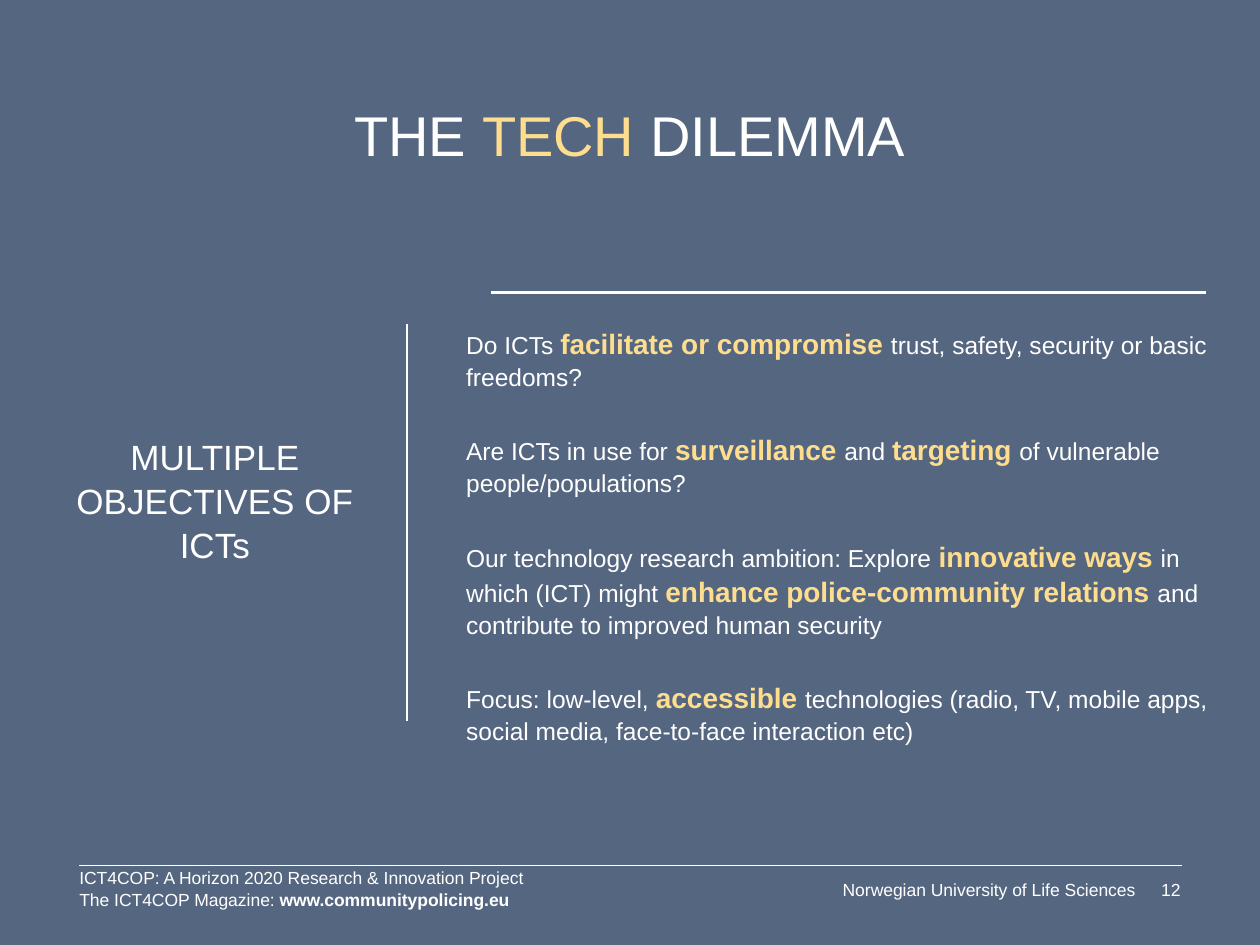
from lxml import etree
from pptx import Presentation
from pptx.dml.color import RGBColor
from pptx.enum.shapes import MSO_CONNECTOR
from pptx.enum.text import MSO_ANCHOR, PP_ALIGN
from pptx.oxml.ns import qn
from pptx.util import Inches, Pt

LEFT, CENTER, RIGHT = PP_ALIGN.LEFT, PP_ALIGN.CENTER, PP_ALIGN.RIGHT
TOP, MIDDLE, BOTTOM = MSO_ANCHOR.TOP, MSO_ANCHOR.MIDDLE, MSO_ANCHOR.BOTTOM
STRAIGHT = MSO_CONNECTOR.STRAIGHT

SLATE = RGBColor(0x55, 0x66, 0x80)
WHITE = RGBColor(0xFF, 0xFF, 0xFF)
GOLD = RGBColor(0xFE, 0xDE, 0x8E)
FONT = "Arial"

# Run styles: size, colour, bold
HEAD = (32, WHITE, False)
HEAD_KEY = (32, GOLD, False)
SIDE = (20, WHITE, False)
BODY = (14, WHITE, False)
KEY = (16, GOLD, True)
FOOT = (10, WHITE, False)
FOOT_KEY = (10, WHITE, True)

# Each paragraph is a list of runs
TITLE = [[("THE ", HEAD), ("TECH ", HEAD_KEY), ("DILEMMA", HEAD)]]
POINTS = [
    [("Do ICTs ", BODY), ("facilitate or compromise ", KEY),
     ("trust, safety, security or basic freedoms?", BODY)],
    [("Are ICTs in use for ", BODY), ("surveillance ", KEY), ("and ", BODY),
     ("targeting ", KEY), ("of vulnerable people/populations?", BODY)],
    [("Our technology research ambition: Explore ", BODY),
     ("innovative ways ", KEY), ("in which (ICT) might ", BODY),
     ("enhance police-community relations ", KEY),
     ("and contribute to improved human security", BODY)],
    [("Focus: low-level, ", BODY), ("accessible ", KEY),
     ("technologies (radio, TV, mobile apps, social media, "
      "face-to-face interaction etc)", BODY)],
]
PROJECT = [
    [("ICT4COP: A Horizon 2020 Research & Innovation Project", FOOT)],
    [("The ICT4COP Magazine: ", FOOT),
     ("www.communitypolicing.eu", FOOT_KEY)],
]

# Text boxes: place, paragraphs, alignment, anchor, gap between paragraphs
BOXES = [
    ((3.7, 2.58, 6.06, 3.65), POINTS, LEFT, TOP, 23),
    ((0.35, 3.44, 2.71, 1.17), [[("MULTIPLE OBJECTIVES OF ICTs", SIDE)]],
     CENTER, TOP, 0),
    ((0.63, 6.88, 5.2, 0.34), PROJECT, LEFT, MIDDLE, 0),
    ((5.85, 6.97, 3.16, 0.17),
     [[("Norwegian University of Life Sciences", FOOT)]], RIGHT, MIDDLE, 0),
    ((9.04, 6.97, 0.33, 0.17), [[("12", FOOT)]], RIGHT, MIDDLE, 0),
]

# Rules: start x, start y, end x, end y, width
RULES = [
    (0.63, 6.87, 9.38, 6.87, 1),
    (3.23, 2.57, 3.23, 5.72, 1.5),
    (3.9, 2.32, 9.57, 2.32, 1.5),
]


def fill_text(shape, paras, align, anchor, gap=0):
    frame = shape.text_frame
    frame.word_wrap = True
    frame.vertical_anchor = anchor
    frame.margin_left = frame.margin_right = 0
    frame.margin_top = frame.margin_bottom = 0
    for i, runs in enumerate(paras):
        para = frame.add_paragraph() if i else frame.paragraphs[0]
        para.alignment = align
        para.line_spacing = 1.05
        para.space_before = Pt(gap if i else 0)
        for text, (size, color, bold) in runs:
            run = para.add_run()
            run.text = text
            font = run.font
            font.name, font.size, font.bold = FONT, Pt(size), bold
            font.color.rgb = color


def add_rule(slide, x1, y1, x2, y2, width):
    rule = slide.shapes.add_connector(
        STRAIGHT, Inches(x1), Inches(y1), Inches(x2), Inches(y2))
    rule.line.color.rgb = WHITE
    rule.line.width = Pt(width)
    etree.SubElement(rule._element.spPr, qn("a:effectLst"))


def main():
    deck = Presentation()
    deck.slide_width, deck.slide_height = Inches(10), Inches(7.5)
    slide = deck.slides.add_slide(deck.slide_layouts[5])
    back = slide.background.fill
    back.solid()
    back.fore_color.rgb = SLATE

    title = slide.shapes.title
    title.left, title.top = Inches(0.63), Inches(0.79)
    title.width, title.height = Inches(8.74), Inches(0.54)
    fill_text(title, TITLE, CENTER, BOTTOM)

    for rule in RULES:
        add_rule(slide, *rule)
    for place, *content in BOXES:
        box = slide.shapes.add_textbox(*map(Inches, place))
        fill_text(box, *content)
    deck.save("out.pptx")


if __name__ == "__main__":
    main()
